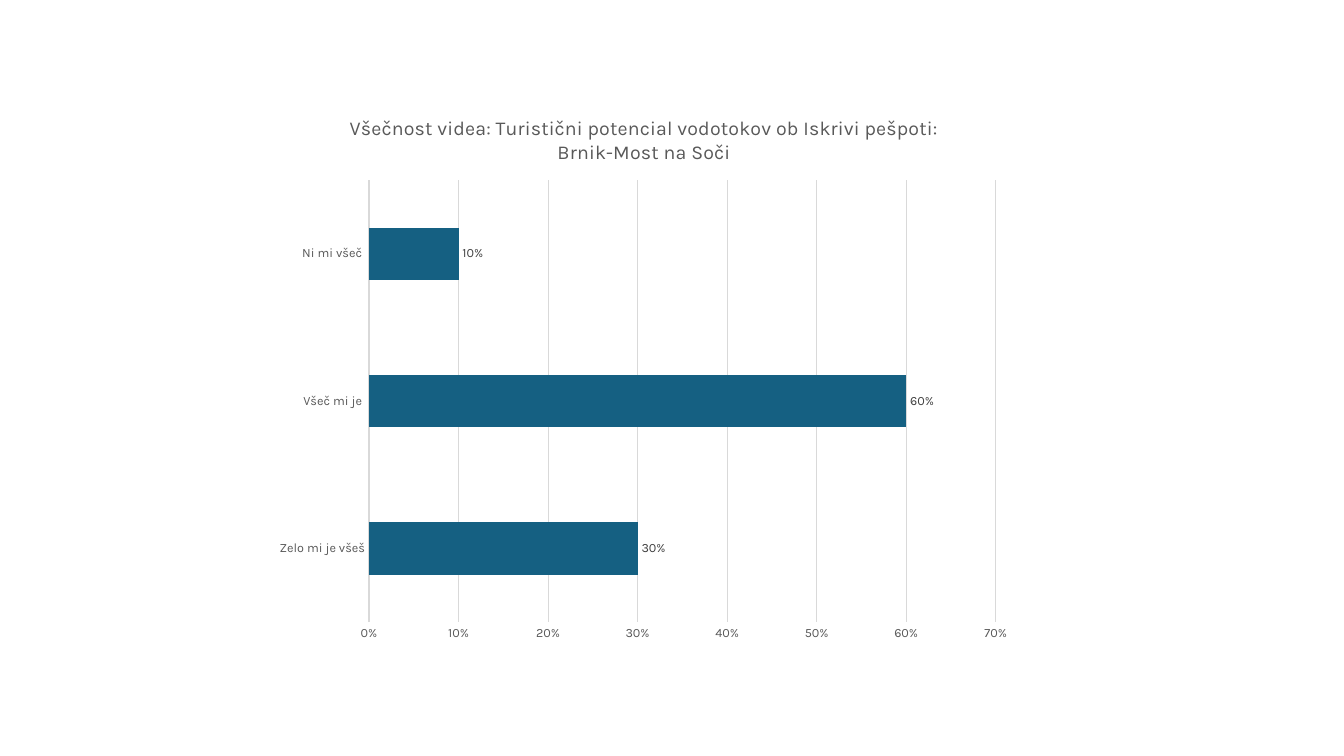
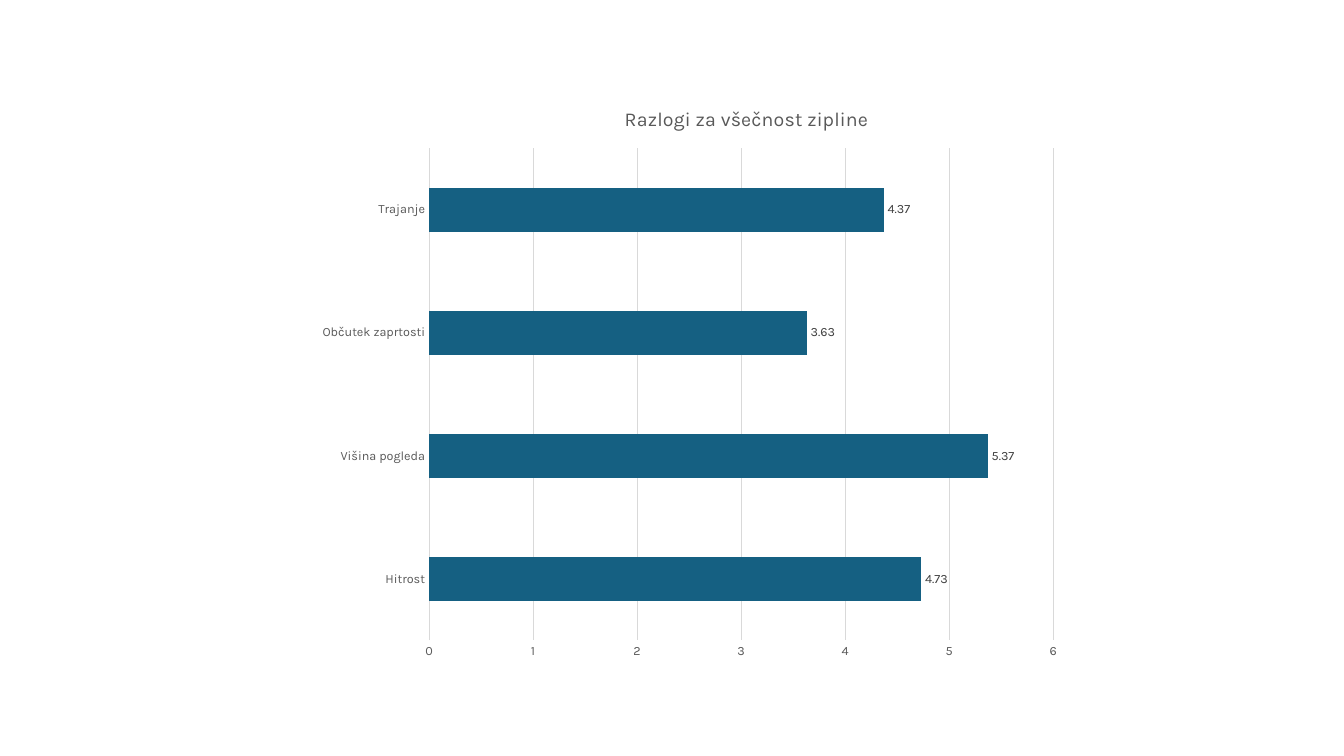
from lxml.etree import SubElement
from pptx import Presentation
from pptx.chart.data import CategoryChartData
from pptx.dml.color import RGBColor
from pptx.enum.chart import (XL_CHART_TYPE as ChartType, XL_LABEL_POSITION as LabelPosition,
                             XL_TICK_MARK as TickMark)
from pptx.oxml.ns import qn
from pptx.util import Pt

# Shared style
FONT = "Karla"
BAR_BLUE = RGBColor(0x15, 0x60, 0x82)
TEXT_GREY = RGBColor(0x59, 0x59, 0x59)
LABEL_GREY = RGBColor(0x40, 0x40, 0x40)
LINE_GREY = RGBColor(0xD9, 0xD9, 0xD9)


def style_font(font, size, color):
    font.name, font.size, font.bold = FONT, Pt(size), False
    font.color.rgb = color


def style_line(line):
    line.color.rgb = LINE_GREY
    line.width = Pt(0.75)


def set_layout(parent, index, values):
    """Place a chart part by fractions of the chart size."""
    for old_layout in parent.findall(qn("c:layout")):
        parent.remove(old_layout)
    layout = parent.makeelement(qn("c:layout"))
    parent.insert(index, layout)
    manual = SubElement(layout, qn("c:manualLayout"))
    for name, value in values.items():
        SubElement(manual, qn(f"c:{name}")).set("val", str(value))


def add_title(chart, text, position):
    frame = chart.chart_title.text_frame
    frame.text = text
    style_font(frame.paragraphs[0].runs[0].font, 14, TEXT_GREY)
    chart.chart_title.include_in_layout = False
    if position:
        left, top = position
        set_layout(chart.chart_title._element, 1,
                   {"xMode": "edge", "yMode": "edge", "x": left, "y": top})


def style_axes(chart, maximum, step, number_format):
    for axis in (chart.category_axis, chart.value_axis):
        axis.major_tick_mark = axis.minor_tick_mark = TickMark.NONE
        style_font(axis.tick_labels.font, 9, TEXT_GREY)
    style_line(chart.category_axis.format.line)
    chart.category_axis.has_major_gridlines = False

    values = chart.value_axis
    values.minimum_scale, values.maximum_scale, values.major_unit = 0, maximum, step
    values.format.line.fill.background()
    values.has_major_gridlines = True
    style_line(values.major_gridlines.format.line)
    values.tick_labels.number_format = number_format
    values.tick_labels.number_format_is_linked = False


def style_bars(chart, number_format):
    plot = chart.plots[0]
    plot.gap_width = 182
    plot.vary_by_categories = False
    series = plot.series[0]
    series.format.fill.solid()
    series.format.fill.fore_color.rgb = BAR_BLUE
    labels = series.data_labels
    labels.show_value = True
    labels.position = LabelPosition.OUTSIDE_END
    labels.number_format = number_format
    labels.number_format_is_linked = False
    style_font(labels.font, 9, LABEL_GREY)


def add_bar_slide(deck, box, title, bars, scale, formats, plot_area, title_position=None):
    page = deck.slides.add_slide(deck.slide_layouts[6])
    data = CategoryChartData()
    data.categories = list(bars)
    data.add_series("Series 1", list(bars.values()))
    chart = page.shapes.add_chart(ChartType.BAR_CLUSTERED, *map(Pt, box), data).chart
    chart.has_legend = False
    chart.font.name, chart.font.size = FONT, Pt(10)
    axis_format, label_format = formats
    add_title(chart, title, title_position)
    style_axes(chart, *scale, axis_format)
    style_bars(chart, label_format)

    left, top, width, height = plot_area
    set_layout(chart._chartSpace.chart.plotArea, 0, {
        "layoutTarget": "inner", "xMode": "edge", "yMode": "edge",
        "x": left, "y": top, "w": width, "h": height})


def main():
    deck = Presentation()
    deck.slide_width, deck.slide_height = Pt(960), Pt(540)

    # Video rating
    add_bar_slide(
        deck, (189.4, 68.4, 541.4, 396.7),
        "Všečnost videa: Turistični potencial vodotokov ob Iskrivi pešpoti: Brnik-Most na Soči",
        {"Zelo mi je všeš": 0.3, "Všeč mi je ": 0.6, "Ni mi všeč ": 0.1},
        scale=(0.7, 0.1), formats=("0%", "0%"),
        plot_area=(0.137, 0.152, 0.827, 0.796))

    # Reasons for liking the zipline
    add_bar_slide(
        deck, (219.6, 61.2, 546.5, 417.6),
        "Razlogi za všečnost zipline",
        {"Hitrost": 4.73, "Višina pogleda": 5.37, "Občutek zaprtosti": 3.63, "Trajanje": 4.37},
        scale=(6, 1), formats=("0", "0.00"),
        plot_area=(0.159, 0.107, 0.816, 0.842), title_position=(0.41, 0.03))

    deck.save("out.pptx")


if __name__ == "__main__":
    main()
